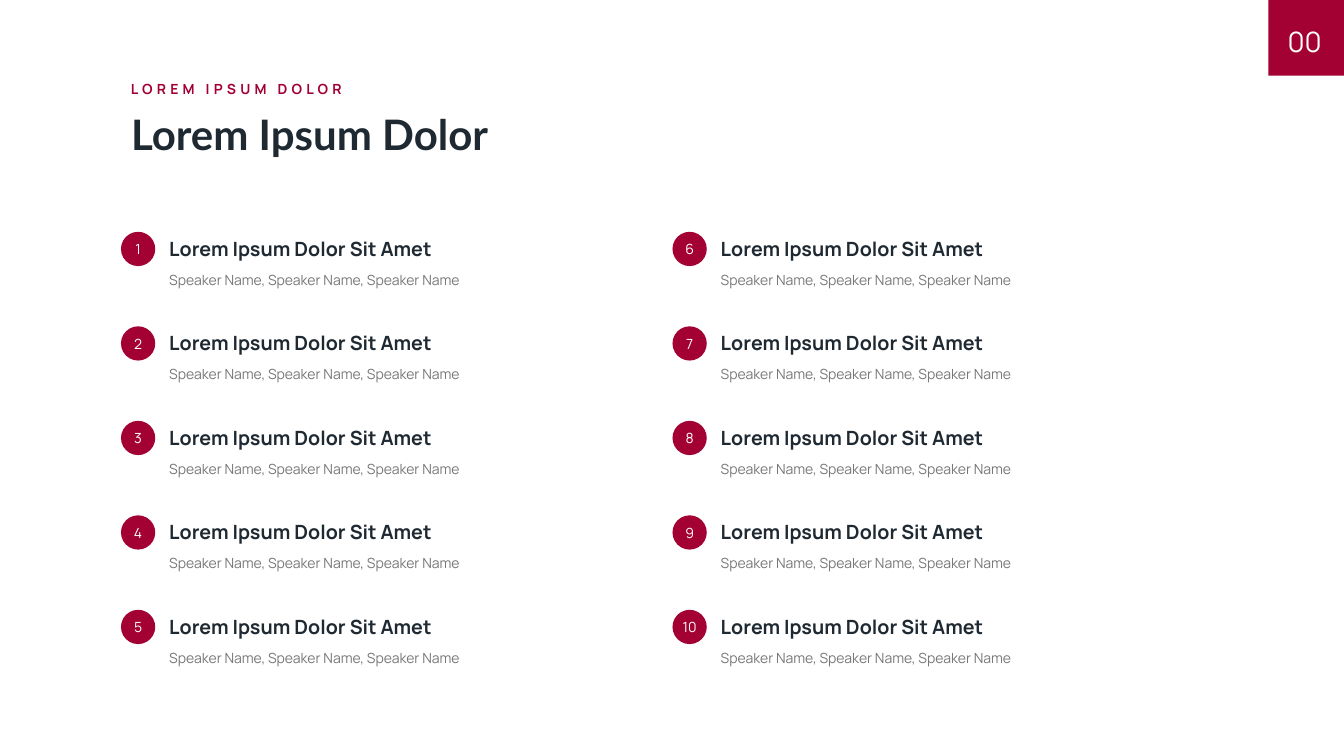
from pptx import Presentation
from pptx.dml.color import RGBColor
from pptx.enum.shapes import MSO_SHAPE as Preset
from pptx.enum.text import MSO_ANCHOR as Anchor, MSO_AUTO_SIZE as AutoSize, PP_ALIGN as Align
from pptx.util import Inches, Pt

CRIMSON, INK, GREY, WHITE = "A30134", "1F2932", "787878", "FFFFFF"
WIDTH, HEIGHT = 13.33, 7.5
LEFT, TOP = 1.2, 2.3
COLUMN_STEP, ROW_STEP = 5.47, HEIGHT / 8
ROWS, COLUMNS = 5, 2
BADGE, TEXT_OFFSET, TEXT_WIDTH = 0.34, 0.38, 3.78


def set_text(shape, text, size, color, font="Manrope", bold=False, align=Align.LEFT,
             anchor=Anchor.TOP, inset=None, spacing=None):
    frame = shape.text_frame
    frame.word_wrap = True
    frame.auto_size = AutoSize.NONE
    frame.vertical_anchor = anchor
    if inset is not None:
        frame.margin_left = frame.margin_right = Inches(inset)
        frame.margin_top = frame.margin_bottom = Inches(inset)
    paragraph = frame.paragraphs[0]
    paragraph.alignment = align
    run = paragraph.add_run()
    run.text = text
    run.font.name = font
    run.font.size = Pt(size)
    run.font.bold = bold
    run.font.color.rgb = RGBColor.from_string(color)
    if spacing:
        run.font._element.set("spc", str(spacing * 100))


def add_block(shapes, preset, *box):
    shape = shapes.add_shape(preset, *map(Inches, box))
    shape.shadow.inherit = False
    shape.fill.solid()
    shape.fill.fore_color.rgb = RGBColor.from_string(CRIMSON)
    shape.line.fill.background()
    return shape


presentation = Presentation()
presentation.slide_width = Inches(WIDTH)
presentation.slide_height = Inches(HEIGHT)
slide = presentation.slides.add_slide(presentation.slide_layouts[5])
shapes = slide.shapes

title = shapes.title
title.left, title.top, title.width, title.height = map(Inches, (LEFT, 1.03, 9.64, 0.57))
set_text(title, "Lorem Ipsum Dolor", 30, INK, font="Lato", bold=True)

kicker = shapes.add_textbox(*map(Inches, (LEFT, 0.75, 4.17, 0.27)))
set_text(kicker, "LOREM IPSUM DOLOR", 10, CRIMSON, bold=True, spacing=3)

add_block(shapes, Preset.RECTANGLE, WIDTH - 0.75, 0, 0.75, 0.75)
page_number = shapes.add_textbox(*map(Inches, (12.56, 0.06, 0.55, 0.69)))
set_text(page_number, "00", 20, WHITE, align=Align.RIGHT, anchor=Anchor.MIDDLE, inset=0)

for index in range(ROWS * COLUMNS):
    column, row = divmod(index, ROWS)
    left = LEFT + column * COLUMN_STEP
    top = TOP + row * ROW_STEP
    session = shapes.add_group_shape().shapes

    speakers = session.add_textbox(
        *map(Inches, (left + TEXT_OFFSET, top + BADGE, TEXT_WIDTH, 0.27)))
    set_text(speakers, "Speaker Name, Speaker Name, Speaker Name", 10, GREY)

    heading = session.add_textbox(
        *map(Inches, (left + TEXT_OFFSET, top, TEXT_WIDTH, 0.34)))
    set_text(heading, "Lorem Ipsum Dolor Sit Amet", 14, INK, bold=True)

    badge = add_block(session, Preset.OVAL, left, top, BADGE, BADGE)
    set_text(badge, str(index + 1), 10, WHITE, align=Align.CENTER,
             anchor=Anchor.MIDDLE, inset=0)

presentation.save("out.pptx")
